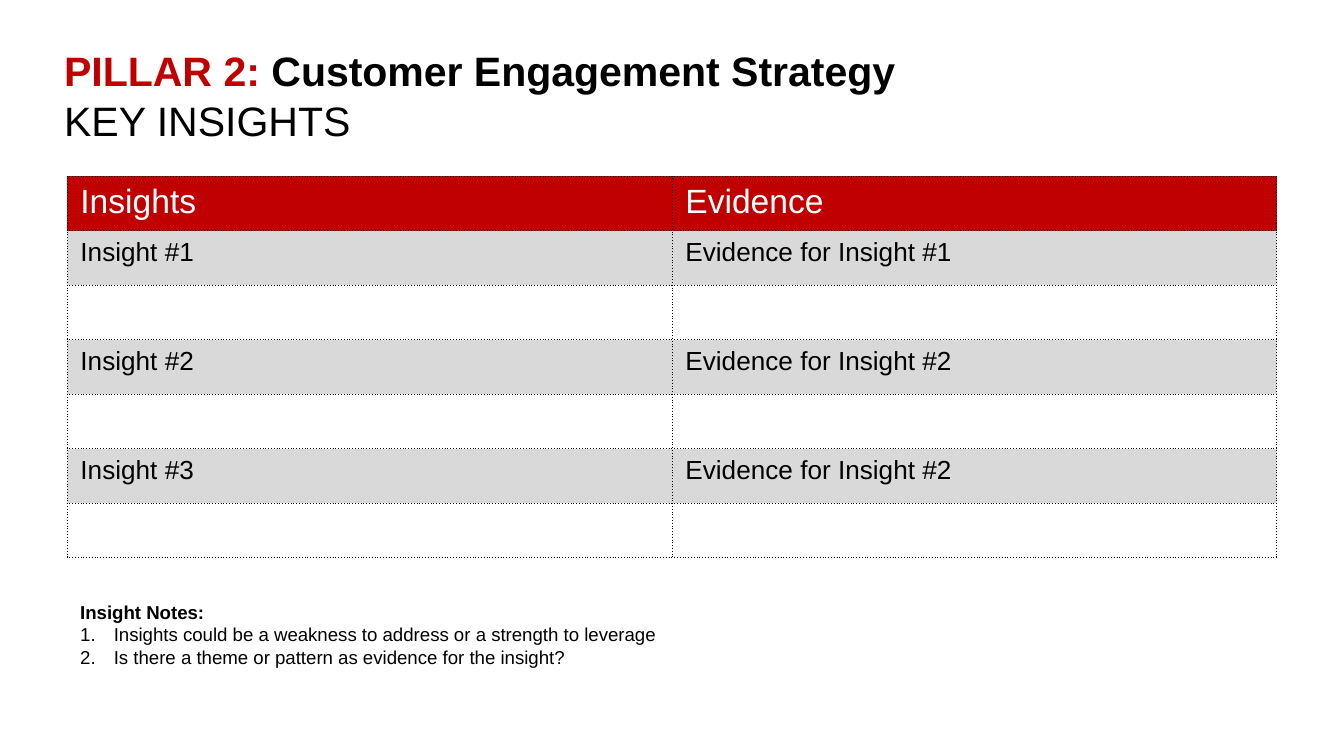
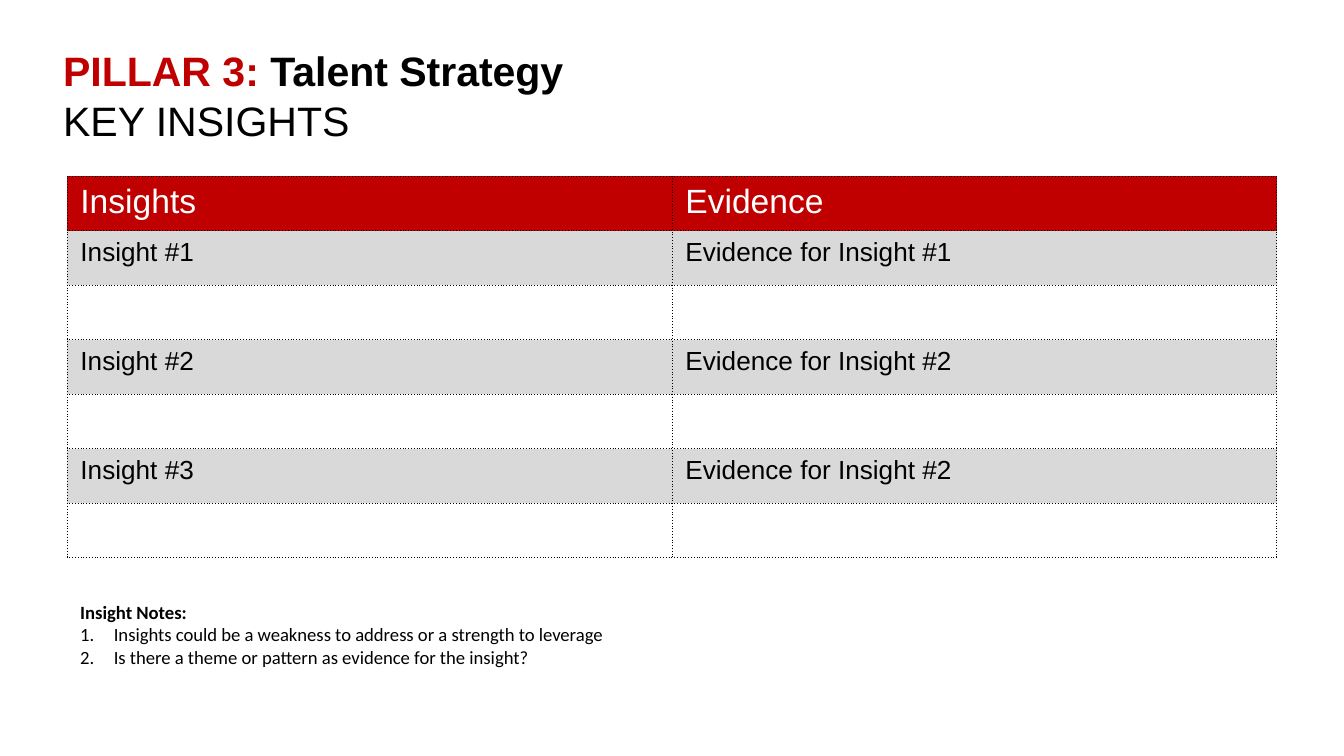
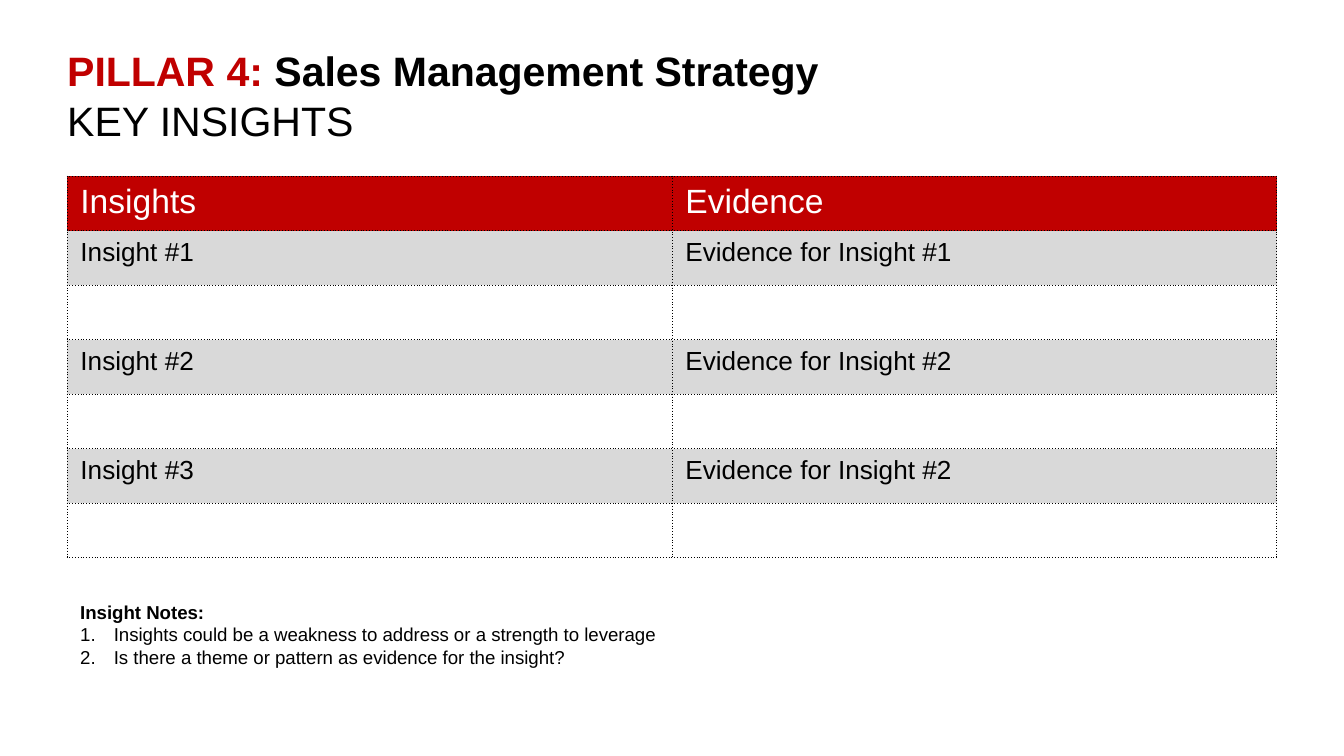
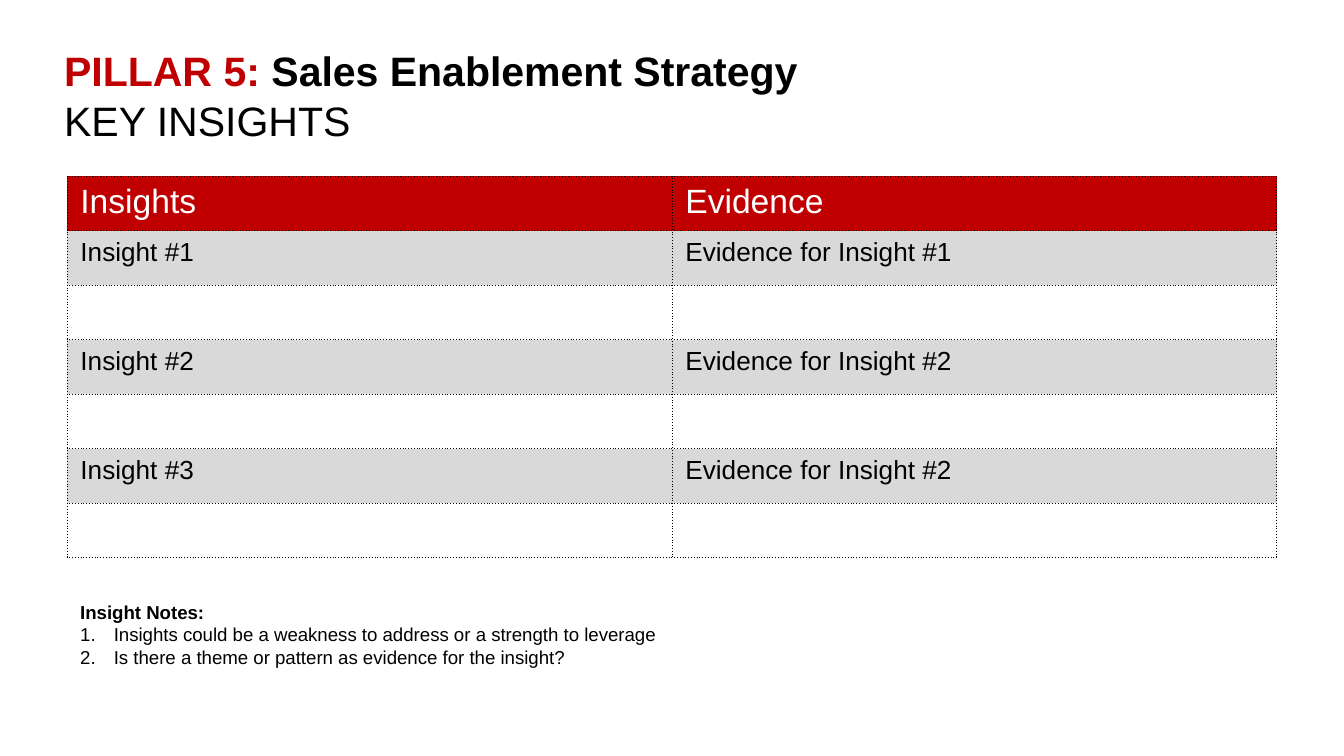
from lxml.etree import SubElement
from pptx import Presentation
from pptx.dml.color import RGBColor
from pptx.enum.text import MSO_ANCHOR, MSO_AUTO_SIZE
from pptx.oxml.ns import qn
from pptx.util import Emu, Pt

EMU_PER_PX = 914400 / 134.4
RED, GREY, BLACK, WHITE = "C00000", "D9D9D9", "000000", "FFFFFF"
FONT = "Arial"

TABLE_BOX = (67, 176, 1210, 382)
NOTES_BOX = (67, 594, 913, 82)
TITLE_TOP, TITLE_WIDTH, TITLE_HEIGHT = 32, 1210, 126

ROWS = [
    ("Insights", "Evidence"),
    ("Insight #1", "Evidence for Insight #1"),
    ("", ""),
    ("Insight #2", "Evidence for Insight #2"),
    ("", ""),
    ("Insight #3", "Evidence for Insight #2"),
    ("", ""),
]
NOTES = [
    "Insight Notes:",
    "Insights could be a weakness to address or a strength to leverage",
    "Is there a theme or pattern as evidence for the insight?",
]
PILLARS = [
    ("PILLAR 2: ", "Customer Engagement Strategy", 51, FONT),
    ("PILLAR 3: ", "Talent Strategy", 50, "Calibri"),
    ("PILLAR 4: ", "Sales Management Strategy", 54, FONT),
    ("PILLAR 5: ", "Sales Enablement Strategy", 51, FONT),
]


def px(n):
    return Emu(round(n * EMU_PER_PX))


def rgb(color):
    return RGBColor.from_string(color)


def style(font, size, color, bold=False, name=FONT):
    font.size = Pt(size)
    font.color.rgb = rgb(color)
    font.bold = bold
    font.name = name


def add_text(s, box):
    sp = s.shapes.add_textbox(*map(px, box))
    tf = sp.text_frame
    tf.word_wrap = True
    return tf


def add_title(s, box, pillar, strategy):
    tf = add_text(s, box)
    tf.vertical_anchor = MSO_ANCHOR.MIDDLE
    p = tf.paragraphs[0]
    for text, color, bold in [
        (pillar, RED, True),
        (strategy, BLACK, True),
        ("KEY INSIGHTS", BLACK, False),
    ]:
        if not bold:
            p.add_line_break()
            SubElement(p._p[-1], qn("a:rPr"), sz="2600")
        r = p.add_run()
        r.text = text
        style(r.font, 22, color, bold)


def add_borders(cell):
    tc_pr = cell._tc.get_or_add_tcPr()
    for side in ("lnL", "lnR", "lnT", "lnB"):
        ln = SubElement(tc_pr, qn(f"a:{side}"), w=str(Pt(0.5)))
        fill = SubElement(ln, qn("a:solidFill"))
        SubElement(fill, qn("a:srgbClr"), val=BLACK)
        SubElement(ln, qn("a:prstDash"), val="sysDot")


def add_insights_table(s, box):
    table = s.shapes.add_table(len(ROWS), len(ROWS[0]), *map(px, box)).table
    table.first_row = False
    table.horz_banding = False
    for i, texts in enumerate(ROWS):
        size, color, fill = (18, WHITE, RED) if i == 0 else (14, BLACK, GREY)
        for j, text in enumerate(texts):
            cell = table.cell(i, j)
            add_borders(cell)
            if not text:
                cell.fill.background()
                continue
            cell.fill.solid()
            cell.fill.fore_color.rgb = rgb(fill)
            cell.text = text
            style(cell.text_frame.paragraphs[0].runs[0].font, size, color)


def add_notes(s, box, font_name):
    tf = add_text(s, box)
    tf.auto_size = MSO_AUTO_SIZE.SHAPE_TO_FIT_TEXT
    tf.text = "\n".join(NOTES)
    for i, p in enumerate(tf.paragraphs):
        if i:
            p_pr = p._p.get_or_add_pPr()
            p_pr.set("marL", "228600")
            p_pr.set("indent", "-228600")
            SubElement(p_pr, qn("a:buFont"), typeface="+mj-lt")
            SubElement(p_pr, qn("a:buAutoNum"), type="arabicPeriod")
        style(p.runs[0].font, 10, BLACK, i == 0, font_name)


def add_pillar_slide(prs, pillar, strategy, title_left, notes_font):
    s = prs.slides.add_slide(prs.slide_layouts[6])
    add_title(s, (title_left, TITLE_TOP, TITLE_WIDTH, TITLE_HEIGHT), pillar, strategy)
    add_insights_table(s, TABLE_BOX)
    add_notes(s, NOTES_BOX, notes_font)


def main():
    prs = Presentation()
    prs.slide_width, prs.slide_height = px(1344), px(756)
    for pillar in PILLARS:
        add_pillar_slide(prs, *pillar)
    prs.save("out.pptx")


if __name__ == "__main__":
    main()
